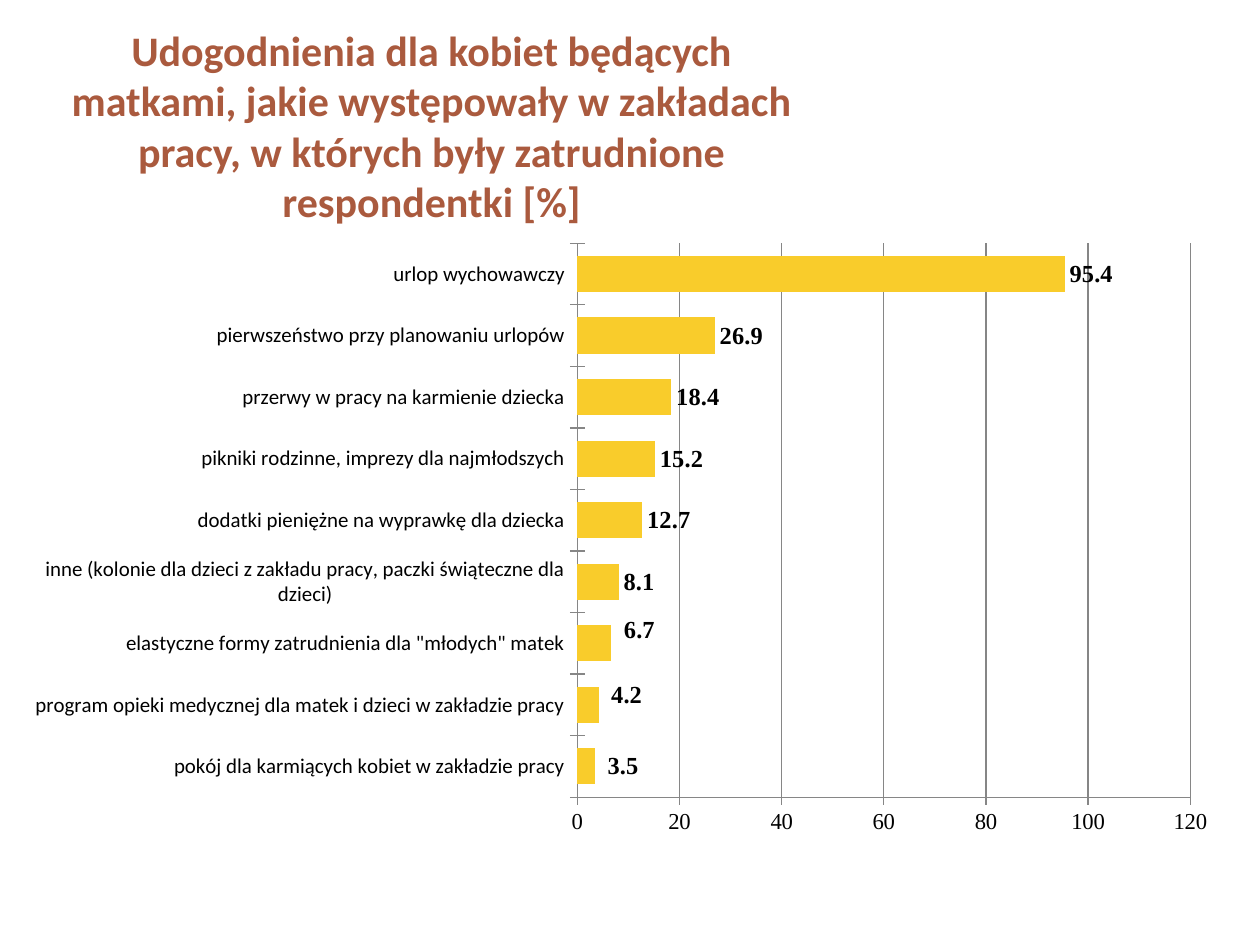
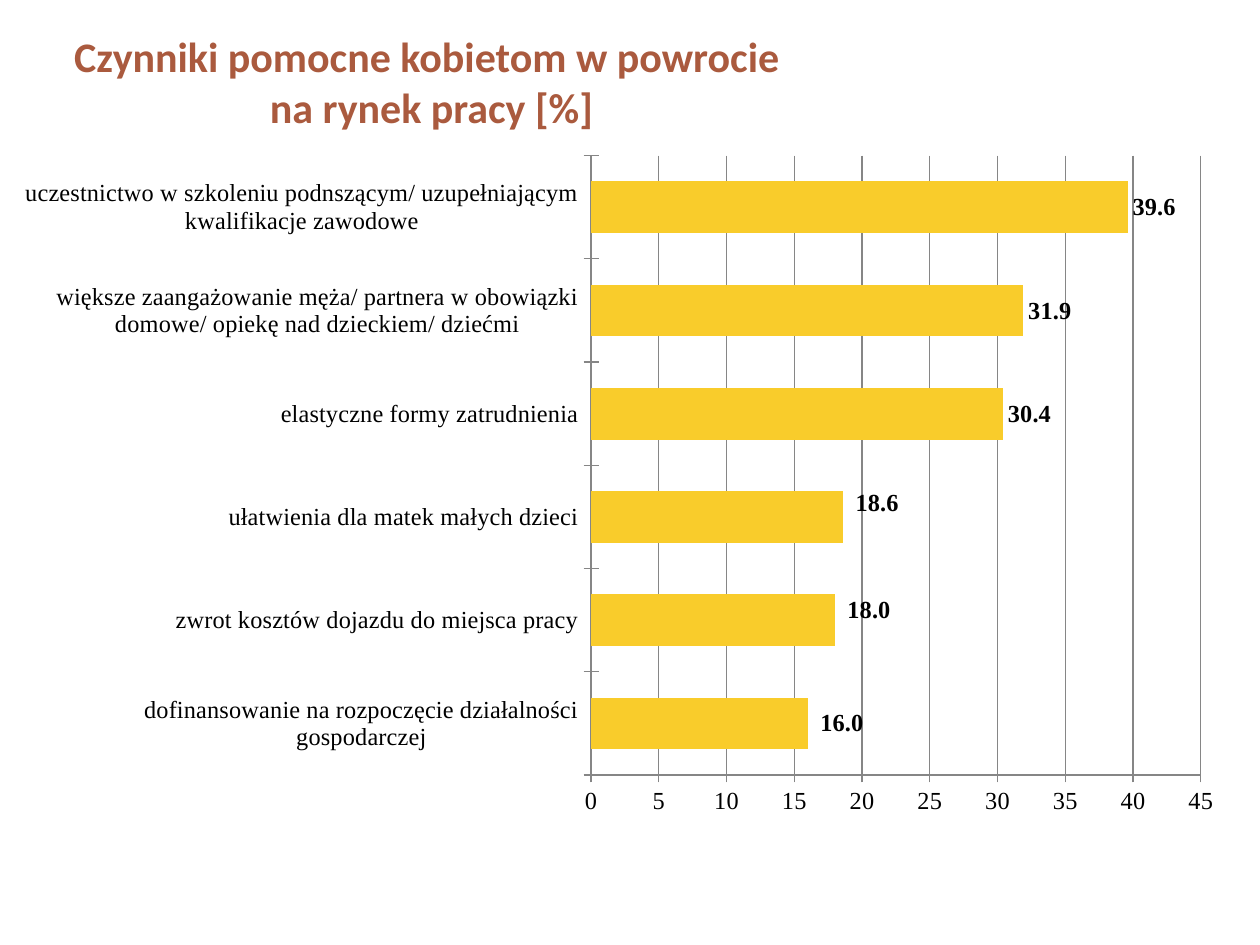
from dataclasses import dataclass

from lxml import etree
from pptx import Presentation
from pptx.chart.data import CategoryChartData
from pptx.dml.color import RGBColor
from pptx.enum.chart import XL_CHART_TYPE, XL_LABEL_POSITION, XL_TICK_MARK
from pptx.enum.text import MSO_ANCHOR, PP_ALIGN
from pptx.oxml.ns import qn
from pptx.util import Inches, Pt

BAR_CLUSTERED = XL_CHART_TYPE.BAR_CLUSTERED
OUTSIDE_END = XL_LABEL_POSITION.OUTSIDE_END
CROSS = XL_TICK_MARK.CROSS
MIDDLE, CENTER = MSO_ANCHOR.MIDDLE, PP_ALIGN.CENTER


@dataclass(frozen=True)
class Theme:
    title_color: RGBColor = RGBColor(0xAA, 0x5A, 0x3E)
    bar_color: RGBColor = RGBColor(0xF9, 0xCC, 0x2B)
    text_color: RGBColor = RGBColor(0, 0, 0)
    line_color: RGBColor = RGBColor(0x86, 0x86, 0x86)
    title_font: str = "Calibri"
    chart_font: str = "Times New Roman"
    title_size: int = 24
    label_size: int = 14


THEME = Theme()

# How far the labels of the three lowest bars move, in inches
LABEL_SHIFT = 0.06
LABEL_RISES = [0, 0.08, 0.11]

SLIDES = [
    {
        "title": ["Udogodnienia dla kobiet będących",
                  "matkami, jakie występowały w zakładach",
                  "pracy, w których były zatrudnione respondentki [%]"],
        "title_height": 1.57,
        "chart_at": (0.28, 1.78, 9.45, 4.88),
        "plot_at": (0.453, 0.031, 0.517, 0.901),
        "gap": 70,
        "axis_size": 13,
        "category_font": ("Calibri", 12),
        "scale": (120, 20),
        "bars": [
            ("pokój dla karmiących kobiet w zakładzie pracy", 3.5),
            ("program opieki medycznej dla matek i dzieci w zakładzie pracy", 4.2),
            ('elastyczne formy zatrudnienia dla "młodych" matek', 6.7),
            ("inne (kolonie dla dzieci z zakładu pracy, paczki świąteczne dla dzieci)", 8.1),
            ("dodatki pieniężne na wyprawkę dla dziecka", 12.7),
            ("pikniki rodzinne, imprezy dla najmłodszych", 15.2),
            ("przerwy w pracy na karmienie dziecka", 18.4),
            ("pierwszeństwo przy planowaniu urlopów", 26.9),
            ("urlop wychowawczy", 95.4),
        ],
    },
    {
        "title": ["Czynniki pomocne kobietom w powrocie ", "na rynek pracy [%]"],
        "title_height": 0.87,
        "chart_at": (0.2, 1.23, 9.53, 5.35),
        "plot_at": (0.467, 0, 0.512, 0.92),
        "gap": 100,
        "axis_size": 14,
        "category_font": ("Times New Roman", 14),
        "scale": (45, 5),
        "bars": [
            ("dofinansowanie na rozpoczęcie działalności gospodarczej", 16),
            ("zwrot kosztów dojazdu do miejsca pracy", 18),
            ("ułatwienia dla matek małych dzieci", 18.6),
            ("elastyczne formy zatrudnienia", 30.4),
            ("większe zaangażowanie męża/ partnera w obowiązki domowe/ "
             "opiekę nad dzieckiem/ dziećmi", 31.9),
            ("uczestnictwo w szkoleniu podnszącym/ uzupełniającym "
             "kwalifikacje zawodowe", 39.6),
        ],
    },
]


def set_font(font, name, size, color, bold=False):
    font.name, font.size, font.bold = name, Pt(size), bold
    font.color.rgb = color


def make_layout(**settings):
    """Build a manual chart layout from its settings, in schema order."""
    layout = etree.Element(qn("c:layout"))
    manual = etree.SubElement(layout, qn("c:manualLayout"))
    for tag, value in settings.items():
        etree.SubElement(manual, qn("c:" + tag)).set("val", str(value))
    return layout


deck = Presentation()
deck.slide_width, deck.slide_height = Inches(10), Inches(7.5)

for content in SLIDES:
    page = deck.slides.add_slide(deck.slide_layouts[6])

    # Title
    box = page.shapes.add_textbox(Inches(0.12), Inches(0.21), Inches(6.61),
                                  Inches(content["title_height"]))
    box.text_frame.word_wrap = True
    box.text_frame.vertical_anchor = MIDDLE
    para = box.text_frame.paragraphs[0]
    para.alignment = CENTER
    for number, line in enumerate(content["title"]):
        if number:
            para.add_line_break()
        span = para.add_run()
        span.text = line
        set_font(span.font, THEME.title_font, THEME.title_size, THEME.title_color, True)

    # Bar chart
    data = CategoryChartData(number_format="0.0")
    data.categories = [name for name, value in content["bars"]]
    data.add_series("Series 1", [value for name, value in content["bars"]])
    chart = page.shapes.add_chart(
        BAR_CLUSTERED, *[Inches(length) for length in content["chart_at"]], data).chart
    chart.has_title = chart.has_legend = False
    set_font(chart.font, THEME.chart_font, content["axis_size"], THEME.text_color)

    # Plot area
    left, top, width, height = content["plot_at"]
    plot_area = chart.plots[0]._element.getparent()
    for layout in plot_area.findall(qn("c:layout")):
        plot_area.remove(layout)
    plot_area.insert(0, make_layout(layoutTarget="inner", xMode="edge", yMode="edge",
                                    x=left, y=top, w=width, h=height))

    # Axes and gridlines
    categories, values = chart.category_axis, chart.value_axis
    category_name, category_size = content["category_font"]
    set_font(categories.tick_labels.font, category_name, category_size, THEME.text_color)
    values.minimum_scale = 0
    values.maximum_scale, values.major_unit = content["scale"]
    values.tick_labels.number_format = "#,##0"
    values.tick_labels.number_format_is_linked = False
    values.has_major_gridlines = True
    categories.has_major_gridlines = False
    for axis in (categories, values):
        axis.major_tick_mark = CROSS
    for lines in (categories, values, values.major_gridlines):
        lines.format.line.color.rgb = THEME.line_color
        lines.format.line.width = Pt(0.75)

    # Bars and their labels
    plot = chart.plots[0]
    plot.gap_width = content["gap"]
    plot.vary_by_categories = False
    series = plot.series[0]
    series.format.fill.solid()
    series.format.fill.fore_color.rgb = THEME.bar_color
    labels = series.data_labels
    labels.show_value = True
    labels.number_format = "0.0"
    labels.number_format_is_linked = False
    labels.position = OUTSIDE_END
    set_font(labels.font, THEME.chart_font, THEME.label_size, THEME.text_color, True)

    # Shifted labels of the lowest bars
    chart_width, chart_height = content["chart_at"][2:]
    for index, rise in enumerate(LABEL_RISES):
        label = series.points[index].data_label
        set_font(label.font, THEME.chart_font, THEME.label_size, THEME.text_color, True)
        label.position = OUTSIDE_END
    for element, rise in zip(series._element.iter(qn("c:dLbl")), LABEL_RISES):
        number_format = etree.Element(qn("c:numFmt"), formatCode="0.0", sourceLinked="0")
        element.insert(1, make_layout(x=LABEL_SHIFT / chart_width, y=-rise / chart_height))
        element.insert(2, number_format)

deck.save("out.pptx")
